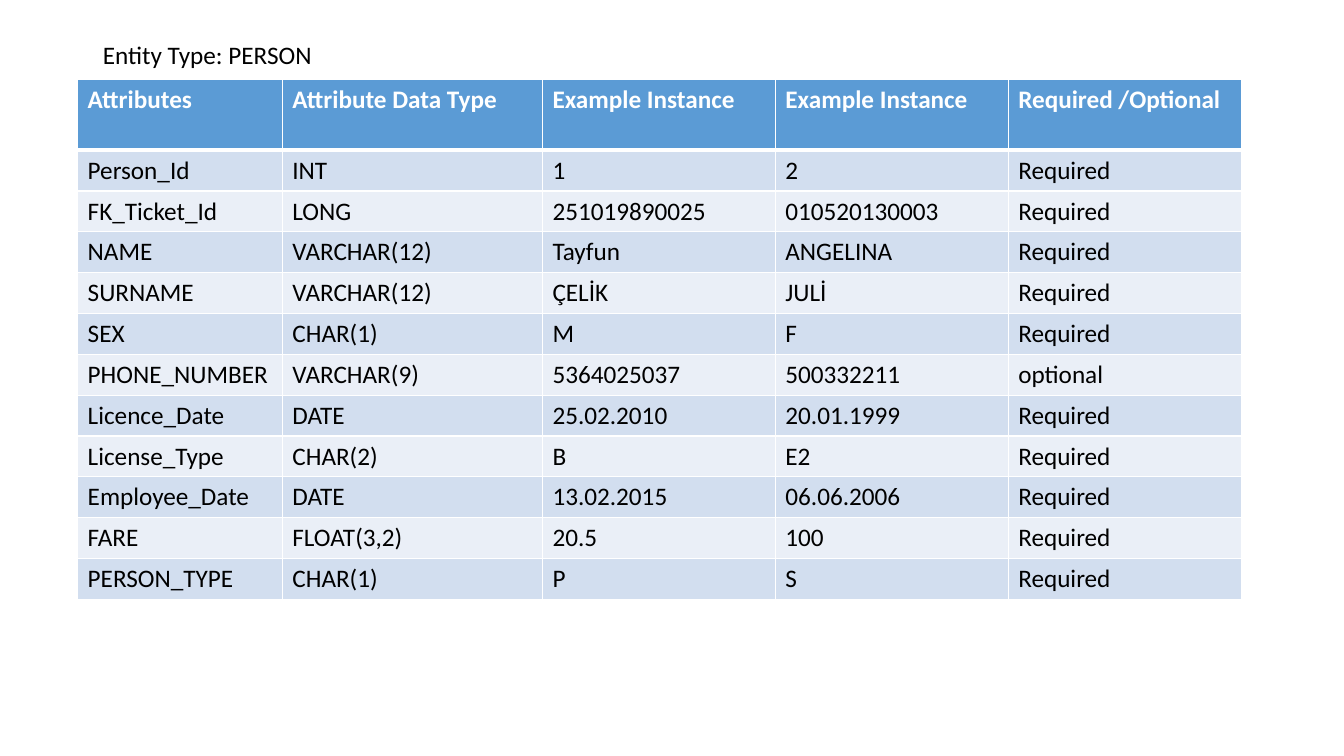
import pptx
import pptx.dml.color
import pptx.enum.text
import pptx.oxml.ns
import pptx.util
from lxml import etree
from pptx.util import Inches

WHITE = pptx.dml.color.RGBColor(0xFF, 0xFF, 0xFF)
BLACK = pptx.dml.color.RGBColor(0x00, 0x00, 0x00)
HEADER_BLUE = pptx.dml.color.RGBColor(0x5B, 0x9B, 0xD5)
BAND_DARK = pptx.dml.color.RGBColor(0xD2, 0xDE, 0xEF)
BAND_LIGHT = pptx.dml.color.RGBColor(0xEA, 0xEF, 0xF7)

FONT = "Calibri"
TEXT_SIZE = 18
TABLE_HEIGHT = 5.16
HEADER_HEIGHT = 0.7
COLUMN_WIDTHS = [2.03, 2.58, 2.31, 2.31, 2.31]

HEADINGS = ("Attributes", "Attribute Data Type", "Example Instance",
            "Example Instance", "Required /Optional")
ATTRIBUTES = [
    ("Person_Id", "INT", "1", "2", "Required"),
    ("FK_Ticket_Id", "LONG", "251019890025", "010520130003", "Required"),
    ("NAME", "VARCHAR(12)", "Tayfun", "ANGELINA", "Required"),
    ("SURNAME", "VARCHAR(12)", "ÇELİK", "JULİ", "Required"),
    ("SEX", "CHAR(1)", "M", "F", "Required"),
    ("PHONE_NUMBER", "VARCHAR(9)", "5364025037", "500332211", "optional"),
    ("Licence_Date", "DATE", "25.02.2010", "20.01.1999", "Required"),
    ("License_Type", "CHAR(2)", "B", "E2", "Required"),
    ("Employee_Date", "DATE", "13.02.2015", "06.06.2006", "Required"),
    ("FARE", "FLOAT(3,2)", "20.5", "100", "Required"),
    ("PERSON_TYPE", "CHAR(1)", "P", "S", "Required"),
]


def add_text(frame, text, color, bold=False):
    paragraph = frame.paragraphs[0]
    paragraph.alignment = pptx.enum.text.PP_ALIGN.LEFT
    run = paragraph.add_run()
    run.text = text
    run.font.name = FONT
    run.font.size = pptx.util.Pt(TEXT_SIZE)
    run.font.bold = bold
    run.font.color.rgb = color


def add_borders(cell, top, bottom):
    properties = cell._tc.get_or_add_tcPr()
    sides = {"lnL": 1, "lnR": 1, "lnT": top, "lnB": bottom}
    for position, (side, width) in enumerate(sides.items()):
        line = etree.Element(pptx.oxml.ns.qn(f"a:{side}"),
                             w=str(pptx.util.Pt(width)))
        fill = etree.SubElement(line, pptx.oxml.ns.qn("a:solidFill"))
        etree.SubElement(fill, pptx.oxml.ns.qn("a:srgbClr"), val=str(WHITE))
        properties.insert(position, line)


def add_entity_title(slide):
    title = slide.shapes.title
    title.left, title.top = Inches(0.92), Inches(0.34)
    title.width, title.height = Inches(2.3), Inches(0.4)
    frame = title.text_frame
    frame.word_wrap = False
    frame.auto_size = pptx.enum.text.MSO_AUTO_SIZE.SHAPE_TO_FIT_TEXT
    frame.vertical_anchor = pptx.enum.text.MSO_ANCHOR.TOP
    add_text(frame, "Entity Type: PERSON", BLACK)


def add_attribute_table(slide):
    rows = [HEADINGS, *ATTRIBUTES]
    table = slide.shapes.add_table(
        len(rows), len(HEADINGS), Inches(0.77), Inches(0.79),
        Inches(sum(COLUMN_WIDTHS)), Inches(TABLE_HEIGHT)).table
    for column, width in zip(table.columns, COLUMN_WIDTHS):
        column.width = Inches(width)

    attribute_height = (TABLE_HEIGHT - HEADER_HEIGHT) / len(ATTRIBUTES)
    for index, values in enumerate(rows):
        is_header = index == 0
        band = BAND_DARK if index % 2 else BAND_LIGHT
        table.rows[index].height = Inches(
            HEADER_HEIGHT if is_header else attribute_height)
        for cell, value in zip(table.rows[index].cells, values):
            cell.fill.solid()
            cell.fill.fore_color.rgb = HEADER_BLUE if is_header else band
            add_borders(cell, top=3 if index == 1 else 1,
                        bottom=3 if is_header else 1)
            add_text(cell.text_frame, value,
                     WHITE if is_header else BLACK, is_header)


def main():
    presentation = pptx.Presentation()
    presentation.slide_width = Inches(13.33)
    presentation.slide_height = Inches(7.5)
    title_only = presentation.slide_layouts[5]
    slide = presentation.slides.add_slide(title_only)
    add_attribute_table(slide)
    add_entity_title(slide)
    presentation.save("out.pptx")


if __name__ == "__main__":
    main()
